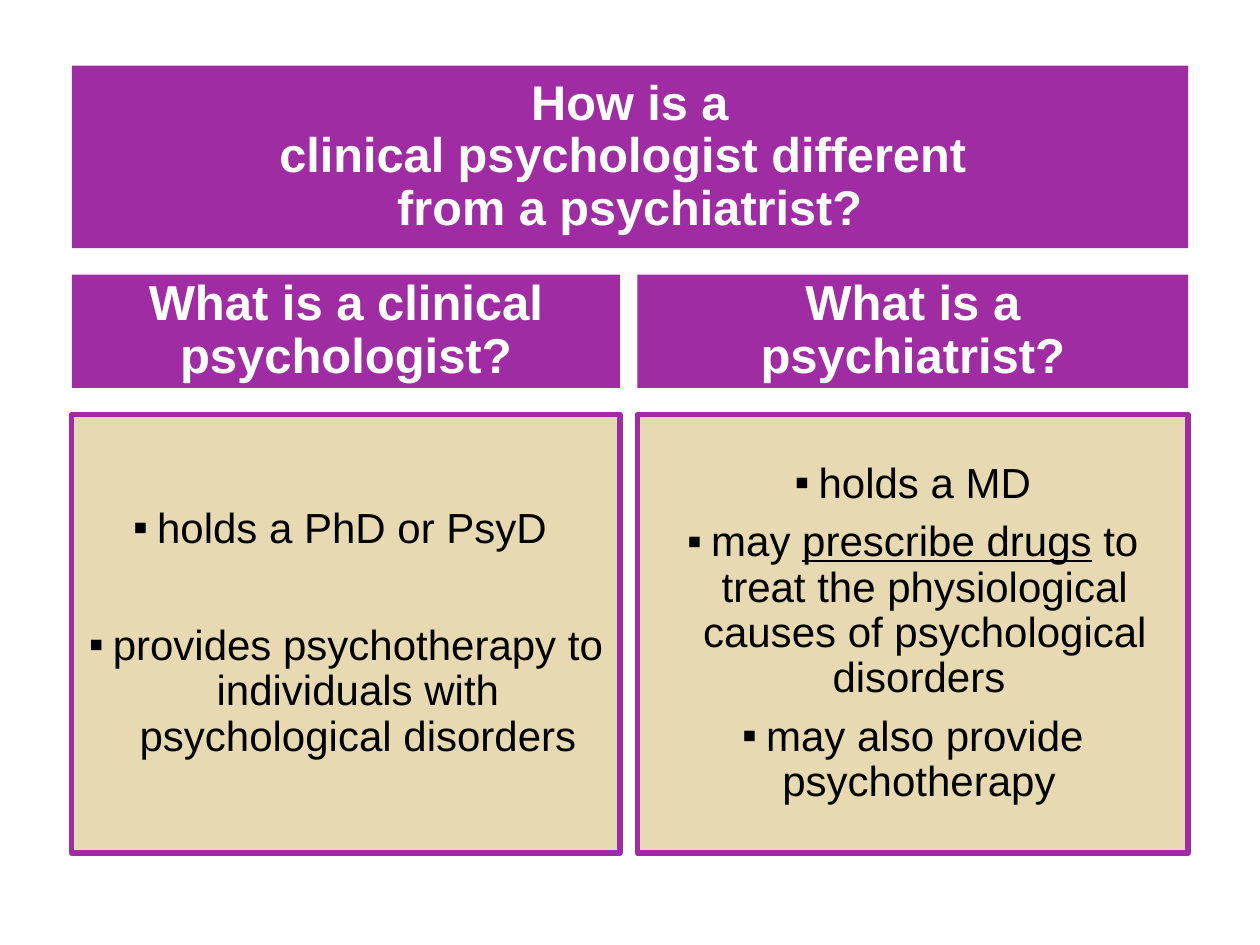
"""Build a slide comparing clinical psychologists with psychiatrists."""
from dataclasses import dataclass

from lxml.etree import SubElement
from pptx import Presentation
from pptx.dml.color import RGBColor
from pptx.enum.shapes import MSO_SHAPE
from pptx.enum.text import MSO_ANCHOR, PP_ALIGN
from pptx.oxml.ns import qn
from pptx.slide import Slide
from pptx.util import Inches, Pt

COLORS = {"purple": "A02CA3", "sand": "E7D9B1", "white": "FFFFFF", "black": "000000"}
WIDTH, HEIGHT = 10, 7.5
COLUMNS = {"left": (0.57, 4.35), "right": (5.06, 4.37), "full": (0.57, 8.86)}
ROWS = {"title": (0.52, 1.45), "heading": (2.18, 0.9), "content": (3.29, 3.48)}


@dataclass(frozen=True)
class Run:
    text: str
    underline: bool = False


@dataclass(frozen=True)
class Line:
    runs: tuple[Run, ...]
    space_before: float = 0


@dataclass(frozen=True)
class Style:
    fill: str
    text: str
    size: float
    bold: bool = False
    bullet: str = ""
    border: str = ""


@dataclass(frozen=True)
class Panel:
    column: str
    row: str
    style: Style
    lines: tuple[Line, ...]


TITLE = Style("purple", "white", 27.8, bold=True)
HEADING = Style("purple", "white", 28, bold=True)
CONTENT = Style("sand", "black", 24, bullet="▪", border="purple")

PANELS = (
    Panel("full", "title", TITLE, (
        Line((Run("How is a"),)),
        Line((Run("clinical psychologist different "),)),
        Line((Run("from a psychiatrist?"),)),
    )),
    Panel("left", "heading", HEADING, (Line((Run("What is a clinical psychologist?"),)),)),
    Panel("left", "content", CONTENT, (
        Line((Run("holds a PhD or PsyD "),)),
        Line((Run("provides psychotherapy to individuals with psychological disorders"),), 41),
    )),
    Panel("right", "heading", HEADING, (Line((Run("What is a psychiatrist?"),)),)),
    Panel("right", "content", CONTENT, (
        Line((Run("holds a MD"),)),
        Line((
            Run("may "),
            Run("prescribe drugs", underline=True),
            Run(" to treat the physiological causes of psychological disorders "),
        ), 7.5),
        Line((Run("may also provide psychotherapy "),), 7.5),
    )),
)


def color(name: str) -> RGBColor:
    return RGBColor.from_string(COLORS[name])


def add_bullet(paragraph, character: str) -> None:
    properties = paragraph._p.get_or_add_pPr()
    properties.set("marL", str(Inches(0.19)))
    properties.set("indent", str(-Inches(0.19)))
    SubElement(properties, qn("a:buFont"), typeface="Arial")
    SubElement(properties, qn("a:buChar"), char=character)


def write_line(paragraph, line: Line, style: Style) -> None:
    if style.bullet:
        add_bullet(paragraph, style.bullet)
    paragraph.alignment = PP_ALIGN.CENTER
    paragraph.line_spacing = 0.9
    if line.space_before:
        paragraph.space_before = Pt(line.space_before)
    for part in line.runs:
        run = paragraph.add_run()
        run.text = part.text
        run.font.name = "Arial"
        run.font.size = Pt(style.size)
        run.font.bold = style.bold
        run.font.underline = part.underline
        run.font.color.rgb = color(style.text)


def add_panel(slide: Slide, panel: Panel) -> None:
    left, width = COLUMNS[panel.column]
    top, height = ROWS[panel.row]
    shape = slide.shapes.add_shape(
        MSO_SHAPE.RECTANGLE, Inches(left), Inches(top), Inches(width), Inches(height)
    )
    shape.shadow.inherit = False
    shape.fill.solid()
    shape.fill.fore_color.rgb = color(panel.style.fill)
    if panel.style.border:
        shape.line.color.rgb = color(panel.style.border)
        shape.line.width = Pt(3)
    else:
        shape.line.fill.background()
    frame = shape.text_frame
    frame.word_wrap = True
    frame.vertical_anchor = MSO_ANCHOR.MIDDLE
    for index, line in enumerate(panel.lines):
        paragraph = frame.add_paragraph() if index else frame.paragraphs[0]
        write_line(paragraph, line, panel.style)


def main() -> None:
    presentation = Presentation()
    presentation.slide_width = Inches(WIDTH)
    presentation.slide_height = Inches(HEIGHT)
    slide = presentation.slides.add_slide(presentation.slide_layouts[6])
    for panel in PANELS:
        add_panel(slide, panel)
    presentation.save("out.pptx")


if __name__ == "__main__":
    main()
